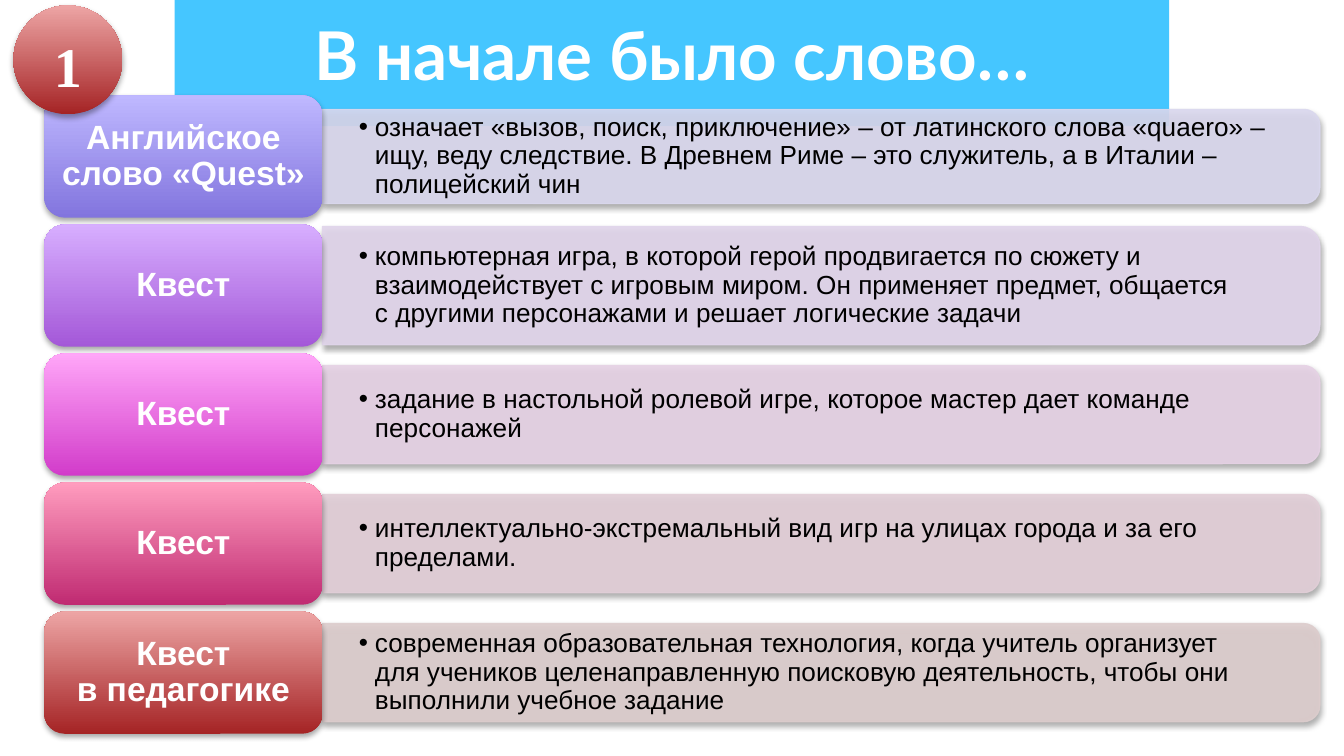
from lxml.etree import SubElement
from pptx import Presentation
from pptx.dml.color import RGBColor
from pptx.enum.shapes import MSO_SHAPE
from pptx.enum.text import MSO_ANCHOR, PP_ALIGN
from pptx.oxml.ns import qn
from pptx.util import Inches, Pt

TITLE = "В начале было слово…"
NUMBER = "1"
RED = ("A52425", "EDA5A5")

# label, description, (label bottom, label top) colours, panel colour, panel height
ROWS = [
    ("Английское слово «Quest»",
     "означает «вызов, поиск, приключение» – от латинского слова «quaero» – ищу, "
     "веду следствие. В Древнем Риме – это служитель, а в Италии – полицейский чин",
     ("8275DE", "BFB8FF"), "DAD8EE", 0.70),
    ("Квест",
     "компьютерная игра, в которой герой продвигается по сюжету и взаимодействует "
     "с игровым миром. Он применяет предмет, общается \n"
     "с другими персонажами и решает логические задачи",
     ("A458D8", "D7AEFF"), "E1D5EB", 0.88),
    ("Квест",
     "задание в настольной ролевой игре, которое мастер дает команде персонажей",
     ("D23CCA", "FFA6F8"), "E6D2E5", 0.73),
    ("Квест",
     "интеллектуально-экстремальный вид игр на улицах города и за его пределами.",
     ("C02B72", "FF9CBE"), "E2CFD8", 0.73),
    ("Квест\nв педагогике",
     "современная образовательная технология, когда учитель организует \n"
     "для учеников целенаправленную поисковую деятельность, чтобы они "
     "выполнили учебное задание",
     RED, "DDCDCD", 0.73),
]

LABEL_LEFT, LABEL_TOP, LABEL_WIDTH, LABEL_HEIGHT = 0.33, 0.71, 2.07, 0.91
ROW_STEP = 0.96
PANEL_LEFT, PANEL_WIDTH = LABEL_LEFT + LABEL_WIDTH, 7.42


def color(value):
    return RGBColor.from_string(value)


def add_alpha(fill, percent):
    choice = fill._xPr.find(qn("a:solidFill"))[0]
    SubElement(choice, qn("a:alpha"), val=str(percent * 1000))


def add_shape(kind, left, top, width, height):
    shape = page.shapes.add_shape(
        kind, Inches(left), Inches(top), Inches(width), Inches(height))
    shape.shadow.inherit = False
    shape.line.fill.background()
    return shape


def fill_solid(fill, value, percent):
    fill.solid()
    fill.fore_color.rgb = color(value)
    add_alpha(fill, percent)


def fill_gradient(shape, colors):
    shape.fill.gradient()
    shape.fill.gradient_angle = 90
    for stop, value in zip(shape.fill.gradient_stops, colors):
        stop.color.rgb = color(value)


def add_shadow(shape):
    effects = shape._element.spPr.find(qn("a:effectLst"))
    shadow = SubElement(effects, qn("a:outerShdw"), blurRad=str(Pt(3.1)),
                        dist=str(Pt(1.8)), dir="5400000", rotWithShape="0")
    black = SubElement(shadow, qn("a:srgbClr"), val="000000")
    SubElement(black, qn("a:alpha"), val="35000")


def add_bullet(para):
    props = para._p.get_or_add_pPr()
    props.set("marL", str(Inches(0.12)))
    props.set("indent", str(-Inches(0.12)))
    bullet_color = SubElement(props, qn("a:buClr"))
    SubElement(bullet_color, qn("a:srgbClr"), val="000000")
    SubElement(props, qn("a:buFont"), typeface="Arial")
    SubElement(props, qn("a:buChar"), char="•")


def write(shape, text, font, size, value="FFFFFF", bold=True, insets=(0.1, 0.1),
          anchor=MSO_ANCHOR.MIDDLE, spacing=None, bullet=False):
    frame = shape.text_frame
    frame.word_wrap = True
    frame.vertical_anchor = anchor
    frame.margin_left = frame.margin_right = Inches(insets[0])
    frame.margin_top = frame.margin_bottom = Inches(insets[1])
    para = frame.paragraphs[0]
    if bullet:
        add_bullet(para)
    para.alignment = PP_ALIGN.LEFT if bullet else PP_ALIGN.CENTER
    para.font.size = Pt(size)
    if spacing:
        para.line_spacing = spacing
    for index, line in enumerate(text.split("\n")):
        if index:
            para.add_line_break()
        span = para.add_run()
        span.text = line
        span.font.name, span.font.size, span.font.bold = font, Pt(size), bold
        span.font.color.rgb = color(value)


def add_text_box(left, top, width, height):
    return page.shapes.add_textbox(
        Inches(left), Inches(top), Inches(width), Inches(height))


# Widescreen page, 16 to 9
deck = Presentation()
deck.slide_width = Inches(10)
deck.slide_height = deck.slide_width * 9 // 16
page = deck.slides.add_slide(deck.slide_layouts[6])

# Title band
band = add_shape(MSO_SHAPE.RECTANGLE, 1.3, 0, 7.4, 0.94)
fill_solid(band.fill, "00B2FF", 73)
write(add_text_box(0.75, 0, 8.5, 0.87), TITLE, "Lato", 36, anchor=MSO_ANCHOR.TOP)

# Rows: a panel turned on its side, its description, and the label
for index, (label_text, description, colors, panel_color, height) in enumerate(ROWS):
    top = LABEL_TOP + index * ROW_STEP
    middle = top + LABEL_HEIGHT / 2

    panel = add_shape(MSO_SHAPE.ROUND_2_SAME_RECTANGLE,
                      PANEL_LEFT + (PANEL_WIDTH - height) / 2,
                      middle - PANEL_WIDTH / 2, height, PANEL_WIDTH)
    panel.rotation = 90
    fill_solid(panel.fill, panel_color, 90)
    fill_solid(panel.line.fill, panel_color, 90)
    panel.line.width = Pt(0.75)
    add_shadow(panel)

    text_height = height - 0.07
    box = add_text_box(PANEL_LEFT, middle - text_height / 2, 7.39, text_height)
    write(box, description, "Arial", 14, "000000", bold=False,
          insets=(0.27, 0.14), spacing=0.9, bullet=True)

    label = add_shape(MSO_SHAPE.ROUNDED_RECTANGLE,
                      LABEL_LEFT, top, LABEL_WIDTH, LABEL_HEIGHT)
    fill_gradient(label, colors)
    add_shadow(label)
    write(label, label_text, "Arial", 18, insets=(0.07, 0.04), spacing=0.9)

# Number badge
badge = add_shape(MSO_SHAPE.OVAL, 0.1, 0.04, 0.81, 0.81)
fill_gradient(badge, RED)
add_shadow(badge)
write(badge, NUMBER, "Times New Roman", 30, insets=(0.07, 0.04), spacing=1.15)

deck.save("out.pptx")
